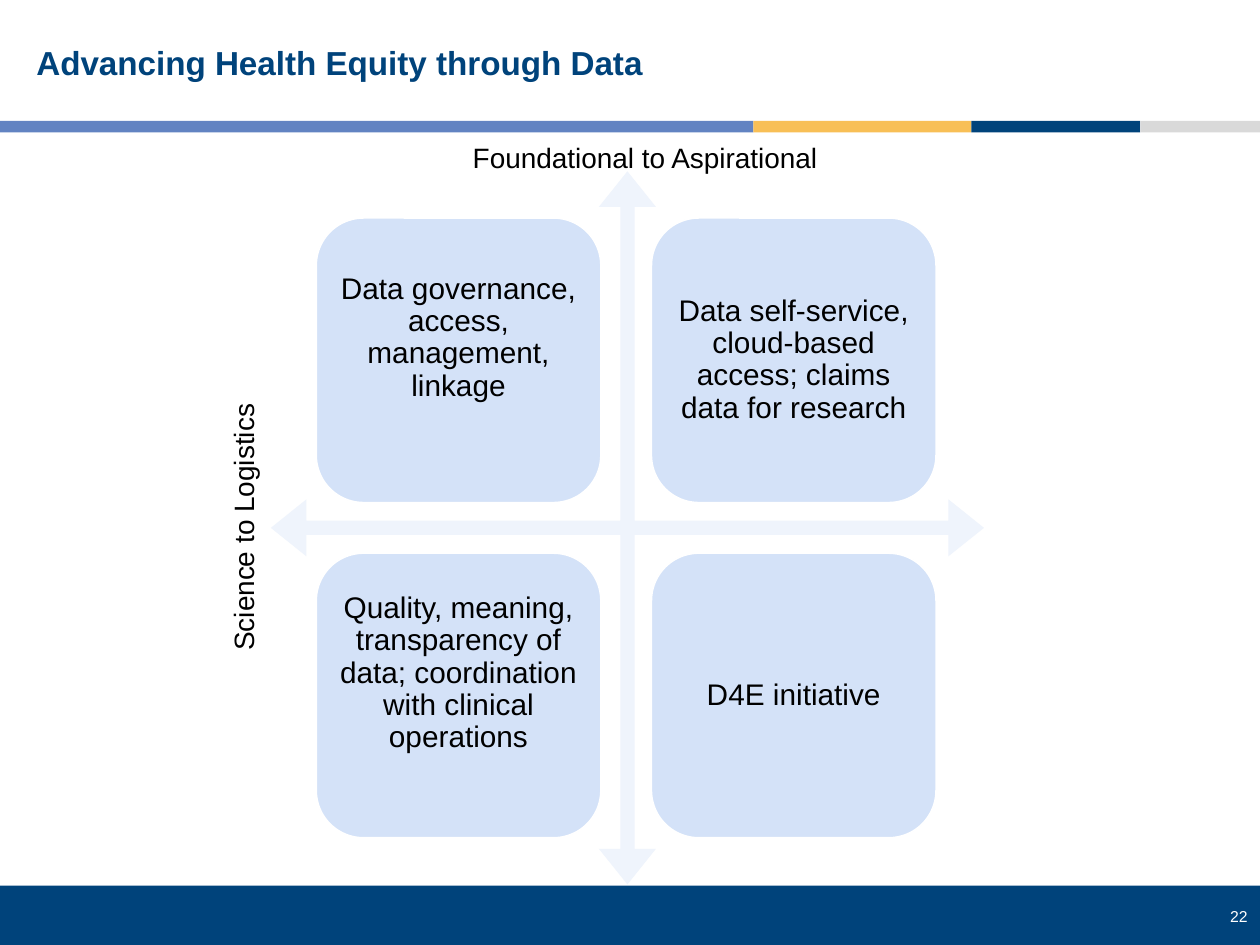
from pptx import Presentation
from pptx.dml.color import RGBColor
from pptx.enum import shapes as kinds, text as txt
from pptx.util import Inches, Pt

NAVY, BLUE, GOLD, GREY = "00437B", "6283C2", "F8BF56", "D9D9D9"
BLACK, WHITE = "000000", "FFFFFF"
CENTER, LEFT, RIGHT = txt.PP_ALIGN.CENTER, txt.PP_ALIGN.LEFT, txt.PP_ALIGN.RIGHT
TOP, MIDDLE = txt.MSO_ANCHOR.TOP, txt.MSO_ANCHOR.MIDDLE

deck = Presentation()
deck.slide_width, deck.slide_height = Inches(10), Inches(7.5)
slide = deck.slides.add_slide(deck.slide_layouts.get_by_name("Blank"))


def add_block(kind, box, fill):
    """Add a flat preset shape without outline; box is left, top, width, height."""
    block = slide.shapes.add_shape(kind, *map(Inches, box))
    block.shadow.inherit = False
    block.fill.solid()
    block.fill.fore_color.rgb = RGBColor.from_string(fill)
    block.line.fill.background()
    return block


def write(holder, wording, size, color, align=CENTER, anchor=TOP, spacing=1.0, bold=False):
    frame = holder.text_frame
    frame.word_wrap = True
    frame.vertical_anchor = anchor
    paragraph = frame.paragraphs[0]
    paragraph.text = wording
    paragraph.alignment = align
    paragraph.line_spacing = spacing
    font_format = {"name": "Arial", "size": Pt(size), "bold": bold}
    for attribute, value in font_format.items():
        setattr(paragraph.font, attribute, value)
    paragraph.font.color.rgb = RGBColor.from_string(color)


# Footer band and the coloured rule under the title
add_block(kinds.MSO_SHAPE.RECTANGLE, (0, 7.03, 10, 0.47), NAVY)
rule_segments = [(0, 5.98, BLUE), (5.98, 1.73, GOLD), (7.71, 1.34, NAVY), (9.05, 0.95, GREY)]
for left, width, color in rule_segments:
    add_block(kinds.MSO_SHAPE.RECTANGLE, (left, 0.96, width, 0.09), color)

# Crossed axes
axes = add_block(kinds.MSO_SHAPE.QUAD_ARROW, (2.15, 1.36, 5.66, 5.66), "EFF4FC")
for index, ratio in enumerate((0.02, 0.04, 0.05)):
    axes.adjustments[index] = ratio

# Quadrants, row by row; the left column sets its text a little higher
quadrants = [
    ["Data governance, access, management, linkage",
     "Data self-service, cloud-based access; claims data for research"],
    ["Quality, meaning, transparency of data; coordination with clinical operations",
     "D4E initiative"],
]
bottom_insets = [0.42, 0.07]
for row, topics in enumerate(quadrants):
    for column, topic in enumerate(topics):
        box = (2.51 + 2.66 * column, 1.73 + 2.66 * row, 2.26, 2.26)
        quadrant = add_block(kinds.MSO_SHAPE.ROUNDED_RECTANGLE, box, "D4E2F8")
        quadrant.line.color.rgb = RGBColor.from_string(WHITE)
        quadrant.line.width = Pt(1)
        write(quadrant, topic, 17, BLACK, anchor=MIDDLE, spacing=0.9)
        insets = {"margin_left": 0.07, "margin_right": 0.07, "margin_top": 0.07,
                  "margin_bottom": bottom_insets[column]}
        for side, inset in insets.items():
            setattr(quadrant.text_frame, side, Inches(inset))

# Title, axis captions and page number
labels = [
    ((0.19, 0.17, 9.57, 0.69), 0, ("Advancing Health Equity through Data", 19, NAVY, LEFT, MIDDLE, 0.9, True)),
    ((3.48, 1.07, 3.28, 0.37), 0, ("Foundational to Aspirational", 16, BLACK)),
    ((0.29, 4, 3.28, 0.37), 270, ("Science to Logistics", 16, BLACK)),
    ((9.31, 7.15, 0.69, 0.25), 0, ("22", 9, WHITE, RIGHT)),
]
for box, rotation, content in labels:
    label = slide.shapes.add_textbox(*map(Inches, box))
    label.rotation = rotation
    write(label, *content)

deck.save("out.pptx")
